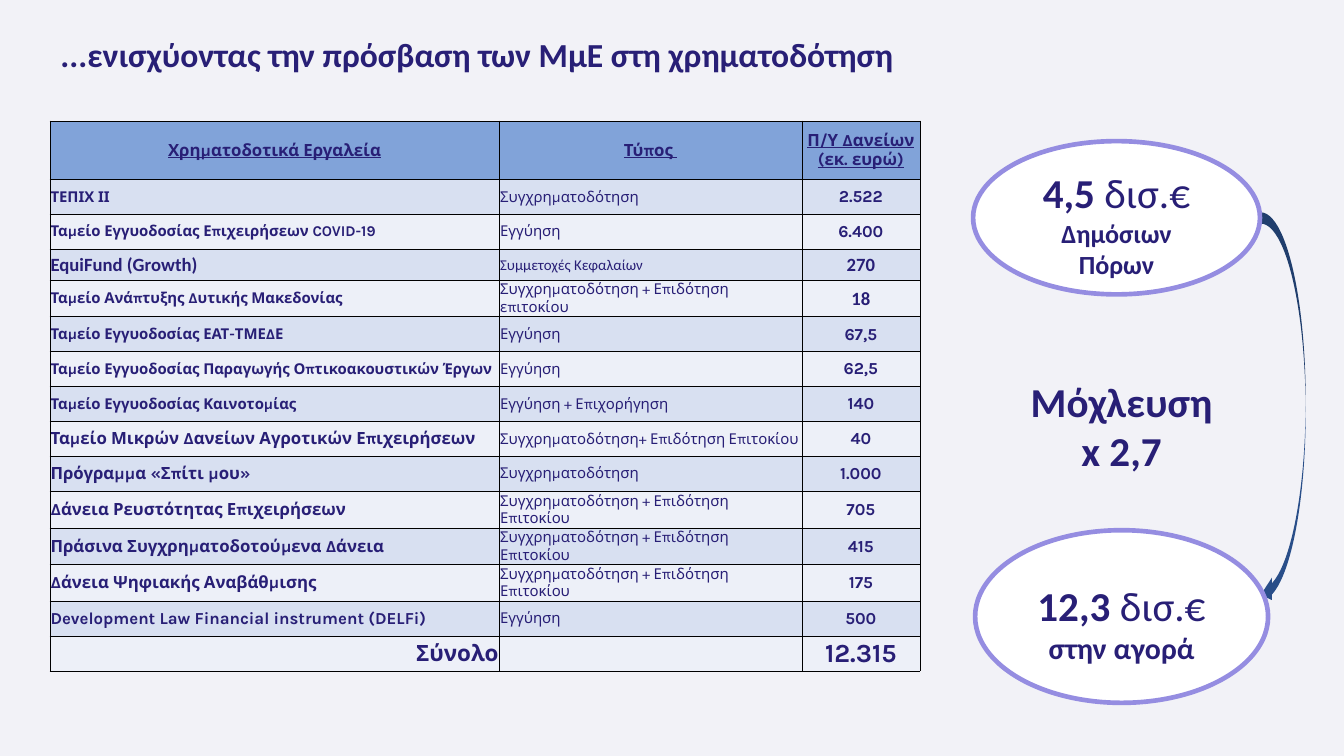
from lxml.etree import SubElement
from pptx import Presentation
from pptx.dml.color import RGBColor
from pptx.enum.shapes import MSO_SHAPE
from pptx.enum.text import MSO_ANCHOR, PP_ALIGN
from pptx.oxml.ns import qn
from pptx.util import Pt

NAVY = RGBColor(0x28, 0x1F, 0x76)
PAPER = RGBColor(0xF2, 0xF2, 0xF7)
WHITE = RGBColor(0xFF, 0xFF, 0xFF)
LILAC = RGBColor(0x95, 0x8D, 0xE1)
STEEL = RGBColor(0x29, 0x4E, 0x89)
HEAD = RGBColor(0x81, 0xA3, 0xD9)
BANDS = RGBColor(0xD8, 0xE0, 0xF1), RGBColor(0xED, 0xF0, 0xF8)

LEFT, MID, RIGHT = PP_ALIGN.LEFT, PP_ALIGN.CENTER, PP_ALIGN.RIGHT
COLS = 481.7, 324, 126.7
HEAD_ROW, ROW = 62.5, 37.4
TITLES = "Χρηματοδοτικά Εργαλεία", "Τύπος ", "Π/Υ Δανείων (εκ. ευρώ)"
LOAN = "Συγχρηματοδότηση"
GRANT = "Συγχρηματοδότηση + Επιδότηση Επιτοκίου"
PLEDGE = "Εγγύηση"
# name, type, budget, size of the name
TOOLS = [
    ("ΤΕΠΙΧ ΙΙ", LOAN, "2.522", 16),
    ("Ταμείο Εγγυοδοσίας Επιχειρήσεων COVID-19", PLEDGE, "6.400", 16),
    ("EquiFund (Growth)", "Συμμετοχές Κεφαλαίων", "270", 20),
    ("Ταμείο Ανάπτυξης Δυτικής Μακεδονίας",
     "Συγχρηματοδότηση + Επιδότηση επιτοκίου", "18", 16),
    ("Ταμείο Εγγυοδοσίας ΕΑΤ-ΤΜΕΔΕ", PLEDGE, "67,5", 16),
    ("Ταμείο Εγγυοδοσίας Παραγωγής Οπτικοακουστικών Έργων", PLEDGE, "62,5", 16),
    ("Ταμείο Εγγυοδοσίας Καινοτομίας", "Εγγύηση + Επιχορήγηση", "140", 16),
    ("Ταμείο Μικρών Δανείων Αγροτικών Επιχειρήσεων",
     "Συγχρηματοδότηση+ Επιδότηση Επιτοκίου", "40", 18),
    ("Πρόγραμμα «Σπίτι μου»", LOAN, "1.000", 18),
    ("Δάνεια Ρευστότητας Επιχειρήσεων", GRANT, "705", 18),
    ("Πράσινα Συγχρηματοδοτούμενα Δάνεια", GRANT, "415", 18),
    ("Δάνεια Ψηφιακής Αναβάθμισης", GRANT, "175", 18),
    ("Development Law Financial instrument (DELFi)", PLEDGE, "500", 18),
]
HEIGHTS = {3: 33.1, 4: 36.7}
CALIBRI_ROW, CALIBRI_SUM = "270", ("270", "18")


def write(par, text, size, bold=True, font="Calibri", align=LEFT, under=False):
    par.alignment = align
    run = par.add_run()
    run.text = text
    style = run.font
    style.name, style.size, style.bold = font, Pt(size), bold
    style.underline = under
    style.color.rgb = NAVY


def inset(frame, left, top, right, bottom):
    frame.margin_left, frame.margin_top = Pt(left), Pt(top)
    frame.margin_right, frame.margin_bottom = Pt(right), Pt(bottom)
    frame.vertical_anchor = MSO_ANCHOR.MIDDLE


def label(slide, box, lines, size, align=LEFT):
    frame = slide.shapes.add_textbox(*map(Pt, box)).text_frame
    frame.word_wrap = True
    inset(frame, 0, 0, 0, 0)
    for i, line in enumerate(lines):
        par = frame.add_paragraph() if i else frame.paragraphs[0]
        write(par, line, size, align=align)


def paint(cell, fill):
    """Give a cell thin black borders, tight margins and a fill."""
    props = cell._tc.get_or_add_tcPr()
    for side in ("a:lnL", "a:lnR", "a:lnT", "a:lnB"):
        line = SubElement(props, qn(side), w=str(Pt(0.5)))
        SubElement(SubElement(line, qn("a:solidFill")), qn("a:srgbClr"), val="000000")
    inset(cell, 0.9, 0.9, 0.9, 0)
    cell.fill.solid()
    cell.fill.fore_color.rgb = fill


def budget(slide, left, top):
    count = len(TOOLS) + 2
    height = HEAD_ROW + ROW * (count - 1)
    grid = slide.shapes.add_table(count, len(COLS), Pt(left), Pt(top),
                                  Pt(sum(COLS)), Pt(height)).table
    for col, width in zip(grid.columns, COLS):
        col.width = Pt(width)
    for i, row in enumerate(grid.rows):
        row.height = Pt(HEIGHTS.get(i, ROW) if i else HEAD_ROW)
        for cell in row.cells:
            paint(cell, BANDS[(i + 1) % 2] if i else HEAD)

    def fill(row, col, text, size, **style):
        write(grid.cell(row, col).text_frame.paragraphs[0], text, size, **style)

    for col, text in enumerate(TITLES):
        fill(0, col, text, 18, font="Karla", align=MID, under=True)
    for i, (name, kind, total, size) in enumerate(TOOLS, 1):
        font = "Calibri" if total == CALIBRI_ROW else "Karla"
        fill(i, 0, name, size, font=font)
        fill(i, 1, kind, 16, bold=False, font=font)
        if total in CALIBRI_SUM:
            fill(i, 2, total, 20, align=MID)
        else:
            fill(i, 2, total, 18, font="Karla", align=MID)
    fill(count - 1, 0, "Σύνολο", 24, font="Karla", align=RIGHT)
    fill(count - 1, 2, "12.315", 28, font="Karla", align=MID)


def shape(slide, kind, box, fill):
    item = slide.shapes.add_shape(kind, *map(Pt, box))
    item.shadow.inherit = False
    item.fill.solid()
    item.fill.fore_color.rgb = fill
    item.line.fill.background()
    return item


def bubble(slide, box, amount, note, size):
    oval = shape(slide, MSO_SHAPE.OVAL, box, WHITE)
    oval.line.color.rgb, oval.line.width = LILAC, Pt(5)
    frame = oval.text_frame
    frame.word_wrap = True
    inset(frame, 7.2, 17, 7.2, 4)
    first = frame.paragraphs[0]
    write(first, amount + " ", 44, align=MID)
    write(first, "δισ.€", 44, bold=False, align=MID)
    write(frame.add_paragraph(), note, size, align=MID)


def lever(slide, left, top):
    """Public funds, the multiplier and the resulting market total."""
    arrow = left + 308.2, top + 76.3, 48.2, 421.9
    shape(slide, MSO_SHAPE.CURVED_LEFT_ARROW, arrow, STEEL)
    label(slide, (left + 26.6, top + 228.2, 265, 152.6),
          ["Μόχλευση", "x 2,7"], 44, MID)
    bubble(slide, (left, top, 307.4, 164.2), "4,5", "Δημόσιων Πόρων", 28)
    bubble(slide, (left + 2.2, top + 416.9, 313.9, 185), "12,3", "στην αγορά", 32)


def main():
    deck = Presentation()
    deck.slide_width, deck.slide_height = Pt(1440), Pt(810)
    slide = deck.slides.add_slide(deck.slide_layouts[6])
    slide.background.fill.solid()
    slide.background.fill.fore_color.rgb = PAPER
    label(slide, (64.8, 27.4, 1319, 60.5),
          ["...ενισχύοντας την πρόσβαση των ΜμΕ στη χρηματοδότηση"], 36)
    budget(slide, 53.3, 129.6)
    lever(slide, 1042.6, 151.2)
    deck.save("out.pptx")


if __name__ == "__main__":
    main()
